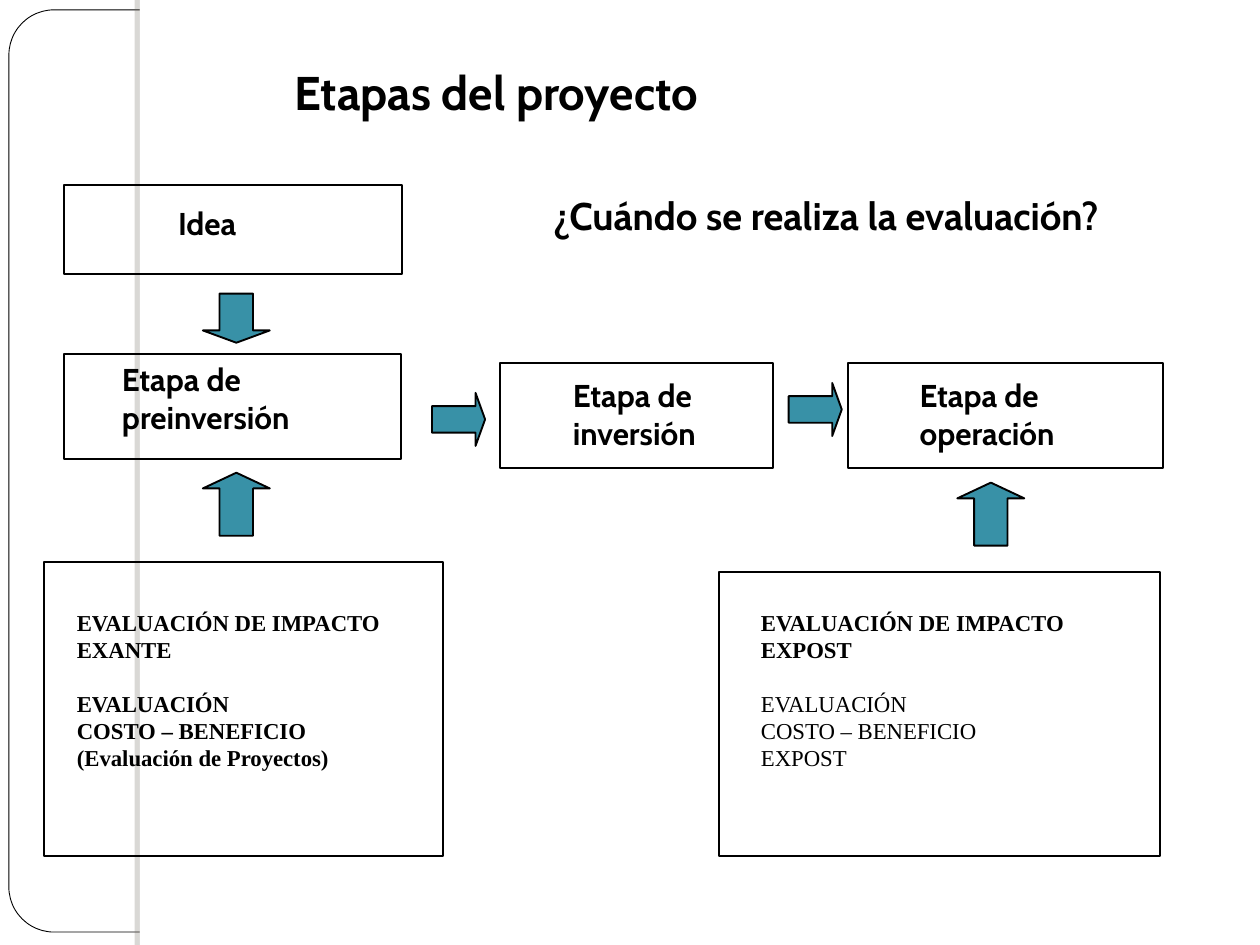
from dataclasses import dataclass

from lxml import etree
from pptx import Presentation
from pptx import util as u
from pptx.dml.color import RGBColor
from pptx.enum import shapes, text
from pptx.oxml.ns import qn


@dataclass(frozen=True)
class Theme:
    ink: str = "000000"
    paper: str = "FFFFFF"
    accent: str = "3891A7"
    shade: str = "706B5F"
    heading_font: str = "Cabin"
    body_font: str = "Times New Roman"
    title_size: float = 27
    question_size: float = 22
    stage_size: float = 18
    detail_size: float = 13
    paragraph_gap: float = 15
    outline: float = 1.07
    frame_outline: float = 0.5


def write_text(frame, lines, *, font, size, color, plain_from=None, gap_at=None, gap=0):
    for index, line in enumerate(lines):
        paragraph = frame.paragraphs[0] if index == 0 else frame.add_paragraph()
        paragraph.alignment = text.PP_ALIGN.LEFT
        if index == gap_at:
            paragraph.space_before = u.Pt(gap)
        run = paragraph.add_run()
        run.text = line
        run.font.name = font
        run.font.size = u.Pt(size)
        run.font.bold = plain_from is None or index < plain_from
        run.font.color.rgb = RGBColor.from_string(color)


class StageSlide:
    def __init__(self, slide, theme):
        self.slide = slide
        self.theme = theme

    def figure(self, preset, place, fill=None, outline=None, adjustments=()):
        figure = self.slide.shapes.add_shape(preset, *map(u.Cm, place))
        figure.shadow.inherit = False
        for index, value in enumerate(adjustments):
            figure.adjustments[index] = value
        if fill:
            figure.fill.solid()
            figure.fill.fore_color.rgb = RGBColor.from_string(fill)
        else:
            figure.fill.background()
        if outline:
            figure.line.width = u.Pt(outline)
            figure.line.color.rgb = RGBColor.from_string(self.theme.ink)
        else:
            figure.line.fill.background()
        return figure

    def background(self):
        theme = self.theme
        kinds = shapes.MSO_SHAPE
        self.figure(kinds.ROUNDED_RECTANGLE, (0.18, 0.2, 25.04, 18.59),
                    theme.paper, theme.frame_outline, [0.049])
        self.figure(kinds.RECTANGLE, (2.82, 0, 22.58, 19.05), theme.paper)
        strip = self.figure(kinds.RECTANGLE, (2.82, 0, 0.2, 19.05), theme.paper)
        effects = strip._element.spPr.find(qn("a:effectLst"))
        shadow = etree.SubElement(effects, qn("a:outerShdw"), blurRad="0",
                                  dist=str(u.Pt(3)), dir="10800000", rotWithShape="0")
        tint = etree.SubElement(shadow, qn("a:srgbClr"), val=theme.shade)
        etree.SubElement(tint, qn("a:alpha"), val="25000")

    def box(self, place):
        self.figure(shapes.MSO_SHAPE.RECTANGLE, place, outline=self.theme.outline)

    def arrow(self, preset, place, head):
        self.figure(preset, place, self.theme.accent, self.theme.outline, [0.5, head])

    def label(self, place, lines, size, font=None, inset=0.25, **style):
        frame = self.slide.shapes.add_textbox(*map(u.Cm, place)).text_frame
        frame.word_wrap = True
        frame.margin_left, frame.margin_right = u.Cm(inset), u.Cm(0.25)
        frame.margin_top = frame.margin_bottom = u.Cm(0.15)
        write_text(frame, lines, size=size, font=font or self.theme.heading_font,
                   color=self.theme.ink, **style)

    def evaluation(self, box, left, lines, plain_from=None):
        theme = self.theme
        self.box(box)
        self.label((left, 12.12, 7.24, 3.81), lines, theme.detail_size, theme.body_font,
                   plain_from=plain_from, gap_at=2, gap=theme.paragraph_gap)


def main():
    deck = Presentation()
    deck.slide_width, deck.slide_height = u.Cm(25.4), u.Cm(19.05)
    theme = Theme()
    stages = StageSlide(deck.slides.add_slide(deck.slide_layouts[6]), theme)
    kinds = shapes.MSO_SHAPE

    stages.background()
    stages.label((5.69, 1.12, 10.41, 1.45), ["Etapas del proyecto"], theme.title_size)
    stages.label((10.9, 3.73, 13.31, 1.19), ["¿Cuándo se realiza la evaluación?"],
                 theme.question_size)

    stages.box((1.3, 3.73, 6.81, 1.8))
    stages.label((1.65, 3.96, 4.17, 1.02), ["Idea"], theme.stage_size, inset=1.94)

    for box, label, name in (
        ((1.3, 7.14, 6.78, 2.11), (2.21, 7.11, 4.52, 1.78), "preinversión"),
        ((10.08, 7.32, 5.51, 2.11), (11.3, 7.44, 3.53, 1.78), "inversión"),
        ((17.09, 7.32, 6.35, 2.11), (18.29, 7.44, 3.71, 1.78), "operación"),
    ):
        stages.box(box)
        stages.label(label, ["Etapa de", name], theme.stage_size)

    stages.evaluation((0.89, 11.33, 8.05, 5.92), 1.3,
                      ["EVALUACIÓN DE IMPACTO", "EXANTE", "EVALUACIÓN",
                       "COSTO – BENEFICIO", "(Evaluación de Proyectos)"])
    stages.evaluation((14.5, 11.53, 8.89, 5.72), 15.09,
                      ["EVALUACIÓN DE IMPACTO", "EXPOST", "EVALUACIÓN",
                       "COSTO – BENEFICIO", "EXPOST"], plain_from=2)

    stages.arrow(kinds.DOWN_ARROW, (4.09, 5.92, 1.35, 0.99), 0.25)
    for left, top in ((8.71, 7.92), (15.9, 7.72)):
        stages.arrow(kinds.RIGHT_ARROW, (left, top, 1.07, 1.07), 0.18)
    for left, top in ((4.09, 9.53), (19.3, 9.73)):
        stages.arrow(kinds.UP_ARROW, (left, top, 1.35, 1.27), 0.25)

    deck.save("out.pptx")


if __name__ == "__main__":
    main()
